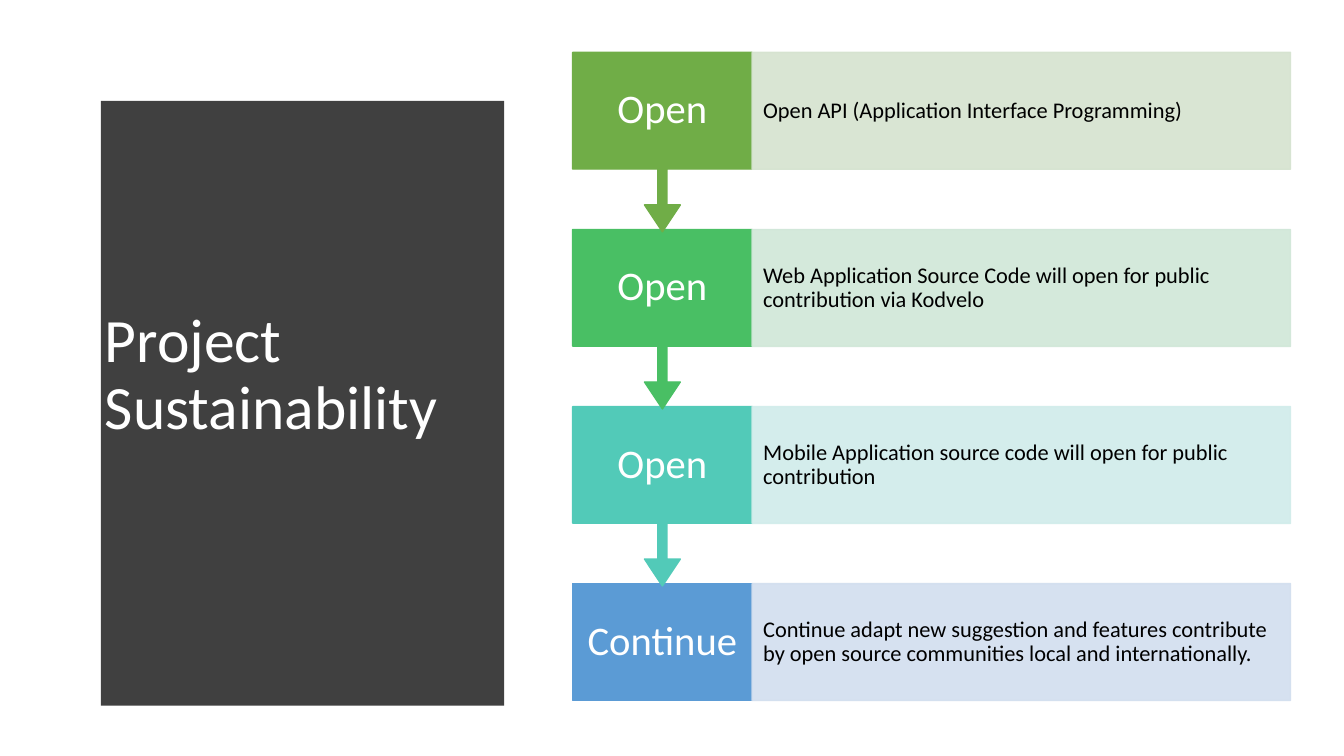
from lxml import etree
from pptx import Presentation
from pptx.dml.color import RGBColor
from pptx.enum.shapes import MSO_SHAPE
from pptx.enum.text import MSO_ANCHOR, MSO_AUTO_SIZE, PP_ALIGN
from pptx.oxml.ns import qn
from pptx.util import Inches, Pt

RECTANGLE = MSO_SHAPE.RECTANGLE
ARROW_CALLOUT = MSO_SHAPE.DOWN_ARROW_CALLOUT
MIDDLE = MSO_ANCHOR.MIDDLE
NO_AUTOFIT = MSO_AUTO_SIZE.NONE
LEFT, CENTER = PP_ALIGN.LEFT, PP_ALIGN.CENTER

FONT = "Calibri"
WHITE = RGBColor(0xFF, 0xFF, 0xFF)
BLACK = RGBColor(0x00, 0x00, 0x00)
CHARCOAL = RGBColor(0x40, 0x40, 0x40)
GREEN = RGBColor(0x70, 0xAD, 0x47)
EMERALD = RGBColor(0x49, 0xBF, 0x64)
TEAL = RGBColor(0x52, 0xCA, 0xB8)
BLUE = RGBColor(0x5B, 0x9B, 0xD5)
PALE_GREEN = RGBColor(0xD5, 0xE3, 0xCF)
PALE_EMERALD = RGBColor(0xD0, 0xE7, 0xD8)
PALE_TEAL = RGBColor(0xD0, 0xEC, 0xEA)
PALE_BLUE = RGBColor(0xD2, 0xDE, 0xEF)

STEPS = [
    ("Open", "Open API (Application Interface Programming)", GREEN, PALE_GREEN),
    ("Open", "Web Application Source Code will open for public contribution via Kodvelo",
     EMERALD, PALE_EMERALD),
    ("Open", "Mobile Application source code will open for public contribution",
     TEAL, PALE_TEAL),
    ("Continue", "Continue adapt new suggestion and features contribute by open source "
     "communities local and internationally.", BLUE, PALE_BLUE),
]


def write_text(shape, text, size, color, alignment, margins):
    """Put one formatted paragraph in the vertical middle of a shape."""
    frame = shape.text_frame
    frame.text = text
    frame.word_wrap = True
    frame.auto_size = NO_AUTOFIT
    frame.vertical_anchor = MIDDLE
    frame.margin_left = frame.margin_right = Inches(margins[0])
    frame.margin_top = frame.margin_bottom = Inches(margins[1])
    paragraph = frame.paragraphs[0]
    paragraph.alignment = alignment
    paragraph.line_spacing = 0.9
    font = paragraph.runs[0].font
    font.name, font.size, font.color.rgb = FONT, Pt(size), color


def add_block(slide, kind, left, top, width, height, color):
    """Add a flat shape whose outline matches its fill."""
    shape = slide.shapes.add_shape(
        kind, Inches(left), Inches(top), Inches(width), Inches(height))
    shape.shadow.inherit = False
    shape.fill.solid()
    shape.fill.fore_color.rgb = color
    shape.line.color.rgb = color
    shape.line.width = Pt(1)
    return shape


def set_opacity(shape, percent):
    """Make the fill and outline of a shape partly transparent."""
    for color in shape.element.spPr.iter(qn("a:srgbClr")):
        etree.SubElement(color, qn("a:alpha")).set("val", str(percent * 1000))


def add_title_panel(slide, left, top, width, height):
    """Draw the dark panel with a bowed right edge and place the title on it."""
    bulge, segments = 0.24, 40
    edge = left + width - bulge
    curve = []
    for index in range(segments + 1):
        part = index / segments
        curve.append((edge + 4 * bulge * part * (1 - part), top + height * part))
    builder = slide.shapes.build_freeform(left, top, scale=Inches(1))
    builder.add_line_segments(curve + [(left, top + height)], close=True)
    panel = builder.convert_to_shape()
    panel.shadow.inherit = False
    panel.fill.solid()
    panel.fill.fore_color.rgb = CHARCOAL
    panel.line.fill.background()

    title = slide.shapes.title
    title.left, title.top = Inches(left + 0.41), Inches(top + 0.59)
    title.width, title.height = Inches(3.74), Inches(height - 1.2)
    write_text(title, "Project Sustainability", 44, WHITE, LEFT, (0.1, 0.05))
    tree = slide.shapes._spTree
    tree.remove(title.element)
    tree.append(title.element)


def add_steps(slide, left, top, width, height):
    """Stack the steps from the bottom up so each arrow overlaps the next box."""
    box_height = 1.16
    pitch = (height - box_height) / (len(STEPS) - 1)
    label_width = width / 4
    for index, (label, detail, color, pale) in reversed(list(enumerate(STEPS))):
        step_top = top + index * pitch
        is_last = index == len(STEPS) - 1
        kind = RECTANGLE if is_last else ARROW_CALLOUT
        label_height = box_height if is_last else 1.78
        box = add_block(slide, kind, left, step_top, label_width, label_height, color)
        if not is_last:
            for position, value in enumerate((0.05, 0.1, 0.15, 0.65)):
                box.adjustments[position] = value
        write_text(box, label, 29, WHITE, CENTER, (0.13, 0.23))

        band = add_block(slide, RECTANGLE, left + label_width, step_top,
                         width - label_width, box_height, pale)
        set_opacity(band, 90)
        write_text(band, detail, 16, BLACK, LEFT, (0.11, 0.22))


def main():
    """Build the slide and save it."""
    presentation = Presentation()
    presentation.slide_width = Inches(13.33)
    presentation.slide_height = Inches(7.5)
    slide = presentation.slides.add_slide(presentation.slide_layouts[5])
    add_title_panel(slide, 0.53, 0.52, 4.79, 6.44)
    add_steps(slide, 5.68, 0.52, 7.12, 6.43)
    presentation.save("out.pptx")


if __name__ == "__main__":
    main()
